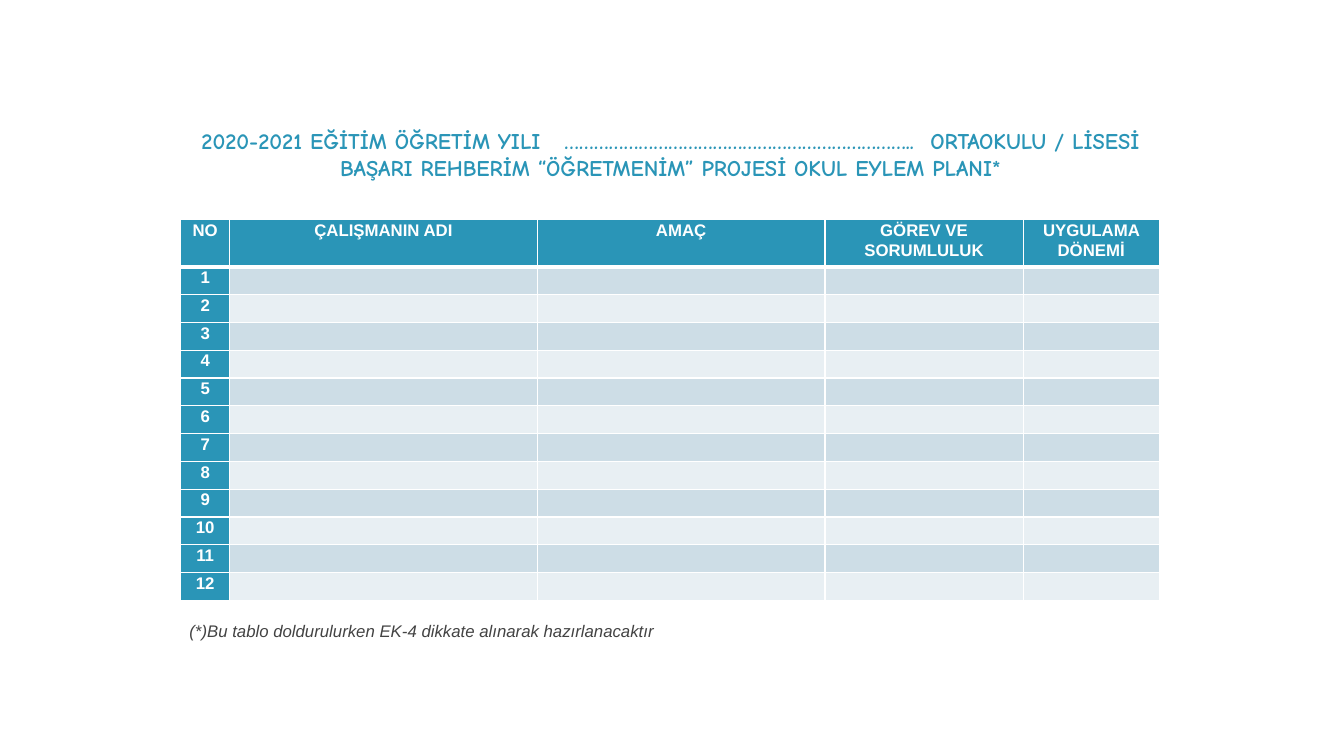
from dataclasses import dataclass
from lxml import etree
from pptx import Presentation
from pptx.dml.color import RGBColor
from pptx.enum.text import MSO_ANCHOR, MSO_AUTO_SIZE, PP_ALIGN
from pptx.oxml.ns import qn
from pptx.slide import Slide
from pptx.table import _Cell
from pptx.text.text import _Paragraph
from pptx.util import Pt

TEAL = RGBColor(0x2A, 0x95, 0xB7)
WHITE = RGBColor(0xFF, 0xFF, 0xFF)
GREY = RGBColor(0x43, 0x43, 0x43)
BAND_DARK = RGBColor(0xCD, 0xDD, 0xE6)
BAND_LIGHT = RGBColor(0xE8, 0xEF, 0xF3)
CENTER = PP_ALIGN.CENTER
TOP = MSO_ANCHOR.TOP
NO_AUTOFIT = MSO_AUTO_SIZE.NONE
TITLE_ONLY_LAYOUT = 5
PLAN_ROWS = 12
HEADER_HEIGHT = 33.8
ROW_HEIGHT = 19.87
THIN_BORDER = 1
THICK_BORDER = 3


@dataclass(frozen=True)
class TextStyle:
    font: str
    size: float
    color: RGBColor
    bold: bool = False
    italic: bool = False


@dataclass(frozen=True)
class TitleRun:
    text: str
    spacing: float = 0


@dataclass(frozen=True)
class Column:
    heading: str
    width: float


TITLE_STYLE = TextStyle("Comic Neue", 16, TEAL, bold=True)
TABLE_STYLE = TextStyle("Arial", 12, WHITE, bold=True)
NOTE_STYLE = TextStyle("Arial", 12, GREY, italic=True)

TITLE_LINES = [
    [
        TitleRun("2020-2021 EĞİTİM ÖĞRETİM YILI"),
        TitleRun(" ", 11.2),
        TitleRun("…………………………………………………………….."),
        TitleRun(" ", 5.6),
        TitleRun("ORTAOKULU / LİSESİ"),
    ],
    [TitleRun("BAŞARI REHBERİM “ÖĞRETMENİM” PROJESİ OKUL EYLEM PLANI*")],
]

COLUMNS = [
    Column("NO", 35.1),
    Column("ÇALIŞMANIN ADI", 219.7),
    Column("AMAÇ", 205.5),
    Column("GÖREV VE SORUMLULUK", 141.6),
    Column("UYGULAMA DÖNEMİ", 97.2),
]


def add_run(paragraph: _Paragraph, text: str, style: TextStyle, spacing: float = 0) -> None:
    run = paragraph.add_run()
    run.text = text
    run.font.name = style.font
    run.font.size = Pt(style.size)
    run.font.bold = style.bold
    run.font.italic = style.italic
    run.font.color.rgb = style.color
    if spacing:
        run.font._element.set("spc", str(round(spacing * 100)))


def add_title(slide: Slide) -> None:
    title = slide.shapes.title
    title.left, title.top, title.width, title.height = Pt(110.2), Pt(83.5), Pt(737.3), Pt(78.5)
    frame = title.text_frame
    frame.word_wrap = True
    frame.auto_size = NO_AUTOFIT
    frame.vertical_anchor = TOP
    frame.margin_left = frame.margin_right = frame.margin_top = frame.margin_bottom = Pt(7.2)
    paragraph = frame.paragraphs[0]
    paragraph.alignment = CENTER
    for index, line in enumerate(TITLE_LINES):
        if index:
            paragraph.add_line_break()
        for part in line:
            add_run(paragraph, part.text, TITLE_STYLE, part.spacing)


def add_borders(cell: _Cell, top: float, bottom: float) -> None:
    properties = cell._tc.get_or_add_tcPr()
    widths = {"a:lnL": THIN_BORDER, "a:lnR": THIN_BORDER, "a:lnT": top, "a:lnB": bottom}
    for tag, width in widths.items():
        border = etree.SubElement(properties, qn(tag), w=str(Pt(width)))
        fill = etree.SubElement(border, qn("a:solidFill"))
        etree.SubElement(fill, qn("a:srgbClr"), val=str(WHITE))


def format_cell(cell: _Cell, text: str, color: RGBColor, top: float, bottom: float) -> None:
    add_borders(cell, top, bottom)
    cell.fill.solid()
    cell.fill.fore_color.rgb = color
    cell.margin_left = cell.margin_right = Pt(5)
    cell.margin_top = cell.margin_bottom = Pt(0)
    cell.vertical_anchor = TOP
    paragraph = cell.text_frame.paragraphs[0]
    paragraph.alignment = CENTER
    paragraph.line_spacing = 1.07
    paragraph.space_after = Pt(8)
    if text:
        add_run(paragraph, text, TABLE_STYLE)
    else:
        etree.SubElement(paragraph._p, qn("a:endParaRPr"), sz=str(TABLE_STYLE.size * 100))


def add_plan_table(slide: Slide) -> None:
    width = sum(column.width for column in COLUMNS)
    height = HEADER_HEIGHT + PLAN_ROWS * ROW_HEIGHT
    frame = slide.shapes.add_table(
        PLAN_ROWS + 1, len(COLUMNS), Pt(129), Pt(156.9), Pt(width), Pt(height)
    )
    table = frame.table
    for index, column in enumerate(COLUMNS):
        table.columns[index].width = Pt(column.width)
        format_cell(table.cell(0, index), column.heading, TEAL, THIN_BORDER, THICK_BORDER)
    table.rows[0].height = Pt(HEADER_HEIGHT)
    for number in range(1, PLAN_ROWS + 1):
        table.rows[number].height = Pt(ROW_HEIGHT)
        band = BAND_DARK if number % 2 else BAND_LIGHT
        top = THICK_BORDER if number == 1 else THIN_BORDER
        for index in range(len(COLUMNS)):
            text, color = ("", band) if index else (str(number), TEAL)
            format_cell(table.cell(number, index), text, color, top, THIN_BORDER)


def add_footnote(slide: Slide) -> None:
    frame = slide.shapes.add_textbox(Pt(128.2), Pt(439.9), Pt(697.7), Pt(43.9)).text_frame
    frame.word_wrap = True
    add_run(
        frame.paragraphs[0],
        "(*)Bu tablo doldurulurken EK-4 dikkate alınarak hazırlanacaktır",
        NOTE_STYLE,
    )


def main() -> None:
    presentation = Presentation()
    presentation.slide_width = Pt(960)
    presentation.slide_height = Pt(540)
    slide = presentation.slides.add_slide(presentation.slide_layouts[TITLE_ONLY_LAYOUT])
    add_title(slide)
    add_plan_table(slide)
    add_footnote(slide)
    presentation.save("out.pptx")


if __name__ == "__main__":
    main()
